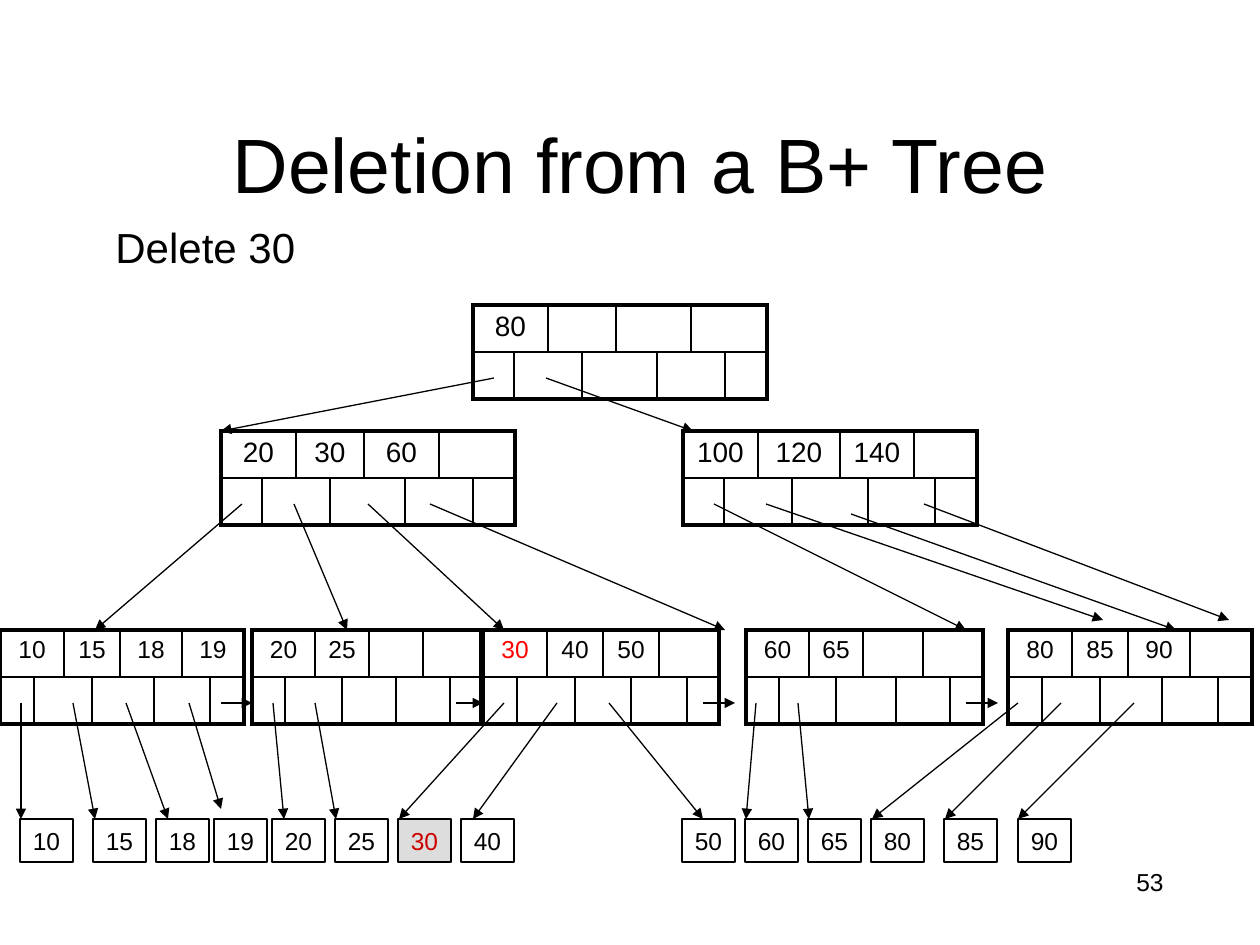
from dataclasses import dataclass

from lxml import etree
from pptx import Presentation
from pptx import util as u
from pptx.dml.color import RGBColor
from pptx.enum import shapes, text
from pptx.oxml.ns import qn


@dataclass(frozen=True)
class Theme:
    font: str = "Arial"
    ink: str = "000000"
    key_deleted: str = "FF0000"
    record_deleted: str = "CC0000"
    record_fill: str = "DDDDDD"
    title: int = 44
    body: int = 24
    inner: int = 16
    small: int = 14
    thin: float = 0.75
    cell: float = 1
    frame: float = 2.25


T = Theme()
DELETED = "30"
ROW_H = 47

INNER_COLS = (41, 34, 34, 34, 41, 34, 34, 42)
LEAF_COLS = (34, 28, 28, 28, 34, 28, 28, 34)
NODES = [
    (473, 305, T.inner, INNER_COLS, ["80"]),
    (221, 431, T.inner, INNER_COLS, ["20", "30", "60"]),
    (683, 431, T.inner, (41, 34, 34, 48, 28, 46, 21, 42), ["100", "120", "140"]),
    (0, 630, T.small, LEAF_COLS, ["10", "15", "18", "19"]),
    (252, 630, T.small, (33, 27, 27, 27, 27, 27, 27, 30), ["20", "25"]),
    (483, 630, T.small, (34, 28, 28, 28, 28, 28, 28, 32), ["30", "40", "50"]),
    (746, 630, T.small, (33, 27, 27, 27, 33, 27, 27, 33), ["60", "65"]),
    (1008, 630, T.small, LEAF_COLS, ["80", "85", "90"]),
]
RECORDS = {
    "10": 20, "15": 93, "18": 156, "19": 214, "20": 272, "25": 335, "30": 398,
    "40": 461, "50": 682, "60": 745, "65": 808, "80": 871, "85": 944, "90": 1018,
}
POINTERS = [
    (378, 431, [(494, 221), (546, 693)]),
    (504, 630, [(242, 95), (294, 347), (368, 504), (430, 725), (714, 966)]),
    (504, 620, [(766, 1103), (924, 1229)]),
    (514, 630, [(851, 1176)]),
    (703, 703, [(221, 252), (456, 483), (703, 735), (966, 998)]),
    (703, 819, [(21, 21), (73, 95), (126, 168), (273, 284), (315, 336),
                (504, 399), (557, 473), (609, 703), (756, 746), (798, 809),
                (1018, 872), (1061, 945), (1134, 1018)]),
    (703, 809, [(189, 221)]),
]


def px(n):
    return u.Emu(round(n * 914400 / 126))


def rgb(value):
    return RGBColor.from_string(value)


def write(tf, content, size, align, color=T.ink):
    p = tf.paragraphs[0]
    p.alignment = align
    p.font.name = T.font
    p.font.size = u.Pt(size)
    p.font.color.rgb = rgb(color)
    if content:
        p.add_run().text = content


def add_title(s, content):
    sp = s.shapes.title
    sp.left, sp.top, sp.width, sp.height = map(px, (105, 84, 1071, 158))
    sp.text_frame.vertical_anchor = text.MSO_ANCHOR.MIDDLE
    write(sp.text_frame, content, T.title, text.PP_ALIGN.CENTER)


def add_label(s, box, content, size, align, wrap):
    tf = s.shapes.add_textbox(*map(px, box)).text_frame
    tf.word_wrap = wrap
    write(tf, content, size, align)


def set_borders(cell, widths):
    tc_pr = cell._tc.get_or_add_tcPr()
    for side, width in widths.items():
        ln = etree.SubElement(tc_pr, qn(f"a:ln{side}"), w=str(u.Pt(width)))
        fill = etree.SubElement(ln, qn("a:solidFill"))
        etree.SubElement(fill, qn("a:srgbClr"), val=T.ink)


def add_node(s, x, y, size, cols, keys):
    last = len(cols) - 1
    frame = s.shapes.add_table(2, len(cols), px(x), px(y), px(sum(cols)), px(2 * ROW_H))
    table = frame.table
    table.first_row = table.horz_banding = False
    for column, width in zip(table.columns, cols):
        column.width = px(width)
    for row in table.rows:
        row.height = px(ROW_H)
    for c in range(0, last, 2):
        table.cell(0, c).merge(table.cell(0, c + 1))
    for c in range(1, last, 2):
        table.cell(1, c).merge(table.cell(1, c + 1))

    texts = {(0, 2 * i): key for i, key in enumerate(keys)}
    for r in range(2):
        for c in range(len(cols)):
            cell = table.cell(r, c)
            cell.margin_bottom = 0
            key = texts.get((r, c), "")
            is_leaf = size == T.small
            color = T.key_deleted if is_leaf and key == DELETED else T.ink
            write(cell.text_frame, key, size, text.PP_ALIGN.CENTER, color)
            if not cell.is_spanned:
                end = c + cell.span_width - 1 if cell.is_merge_origin else c
                set_borders(cell, {
                    "L": T.frame if c == 0 else T.cell,
                    "R": T.frame if end == last else T.cell,
                    "T": T.frame if r == 0 else T.cell,
                    "B": T.frame if r == 1 else T.cell,
                })
            cell.fill.background()


def add_record(s, x, key):
    sp = s.shapes.add_shape(shapes.MSO_SHAPE.RECTANGLE, *map(px, (x, 819, 53, 43)))
    sp.shadow.inherit = False
    sp.line.color.rgb = rgb(T.ink)
    sp.line.width = u.Pt(T.thin)
    color = T.ink
    if key == DELETED:
        sp.fill.solid()
        sp.fill.fore_color.rgb = rgb(T.record_fill)
        color = T.record_deleted
    else:
        sp.fill.background()
    tf = sp.text_frame
    tf.word_wrap = False
    tf.vertical_anchor = text.MSO_ANCHOR.MIDDLE
    write(tf, key, T.small, text.PP_ALIGN.CENTER, color)


def add_pointer(s, x1, y1, x2, y2):
    cx = s.shapes.add_connector(shapes.MSO_CONNECTOR.STRAIGHT, *map(px, (x1, y1, x2, y2)))
    cx.line.color.rgb = rgb(T.ink)
    cx.line.width = u.Pt(T.thin)
    etree.SubElement(cx.line._get_or_add_ln(), qn("a:tailEnd"), type="triangle")
    etree.SubElement(cx._element.spPr, qn("a:effectLst"))


def main():
    prs = Presentation()
    prs.slide_width, prs.slide_height = px(1260), px(945)
    s = prs.slides.add_slide(prs.slide_layouts[5])
    add_title(s, "Deletion from a B+ Tree")
    add_label(s, (103, 215, 207, 63), "Delete 30", T.body, text.PP_ALIGN.LEFT, False)
    add_label(s, (914, 861, 262, 63), "53", T.small, text.PP_ALIGN.RIGHT, True)
    for node in NODES:
        add_node(s, *node)
    for key, x in RECORDS.items():
        add_record(s, x, key)
    for y1, y2, spans in POINTERS:
        for x1, x2 in spans:
            add_pointer(s, x1, y1, x2, y2)
    prs.save("out.pptx")


if __name__ == "__main__":
    main()
